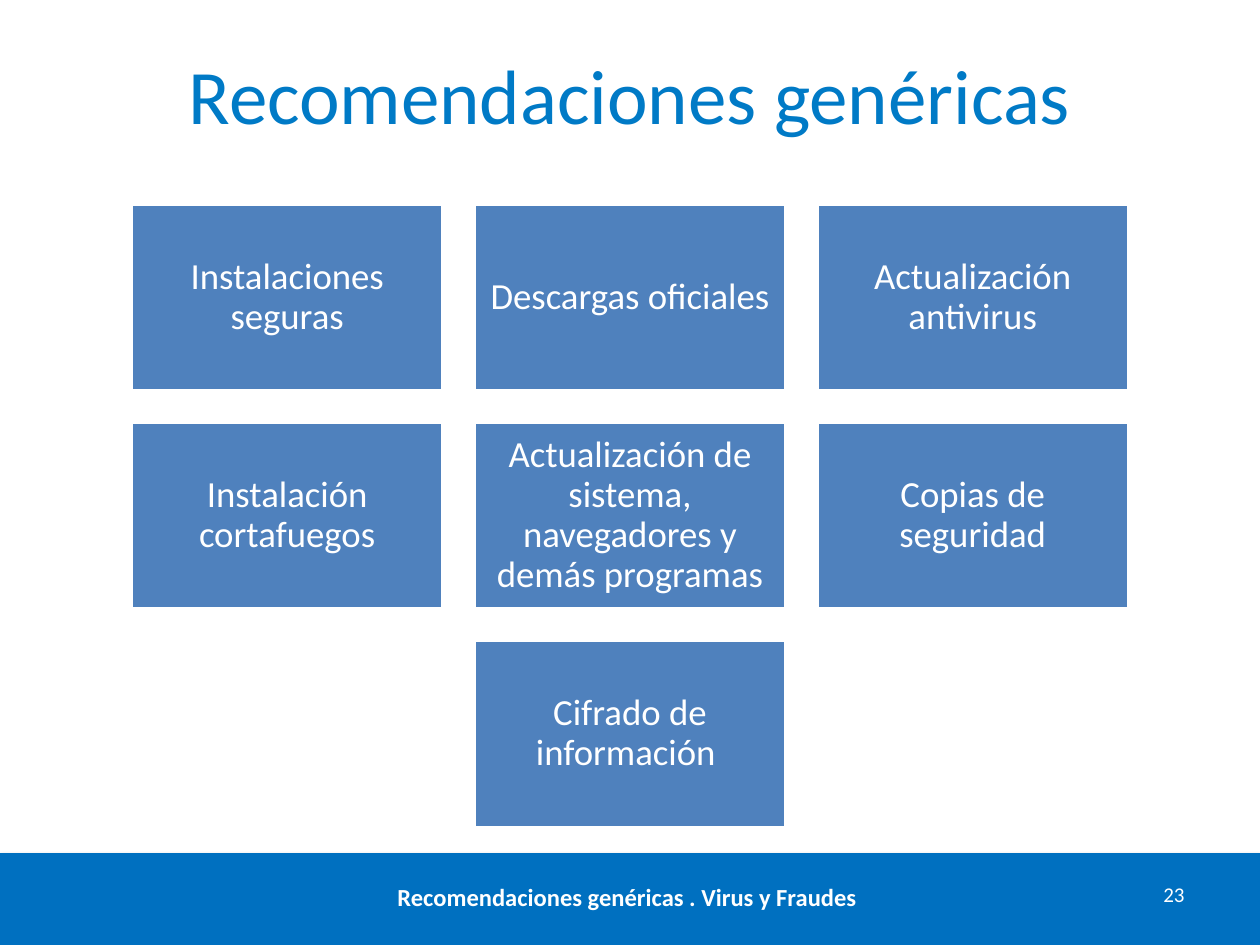
from dataclasses import dataclass

from pptx import Presentation
from pptx.dml.color import RGBColor
from pptx.enum.shapes import MSO_SHAPE
from pptx.enum.text import MSO_ANCHOR, PP_ALIGN
from pptx.oxml import parse_xml
from pptx.oxml.ns import nsdecls, qn
from pptx.util import Cm, Pt


@dataclass(frozen=True)
class Theme:
    font: str = "Calibri"
    title: RGBColor = RGBColor(0x00, 0x7A, 0xC6)
    band: RGBColor = RGBColor(0x00, 0x70, 0xC0)
    tile: RGBColor = RGBColor(0x4F, 0x81, 0xBD)
    white: RGBColor = RGBColor(0xFF, 0xFF, 0xFF)
    title_size: int = 44
    tile_size: int = 21
    footer_size: int = 14
    number_size: int = 12


class SlideBuilder:
    def __init__(self, page, theme):
        self.page = page
        self.theme = theme

    def set_text(self, box, text, size, color, align=PP_ALIGN.CENTER, bold=False):
        frame = box.text_frame
        frame.word_wrap = True
        frame.text = text
        para = frame.paragraphs[0]
        para.alignment = align
        for span in para.runs:
            span.font.name = self.theme.font
            span.font.size = Pt(size)
            span.font.bold = bold
            span.font.color.rgb = color
        return para

    def rectangle(self, left, top, width, height, fill):
        box = self.page.shapes.add_shape(
            MSO_SHAPE.RECTANGLE, Cm(left), Cm(top), Cm(width), Cm(height))
        box.shadow.inherit = False
        box.fill.solid()
        box.fill.fore_color.rgb = fill
        return box

    def band(self, left, top, width, height):
        box = self.rectangle(left, top, width, height, self.theme.band)
        box.line.fill.background()
        effects = box._element.spPr.find(qn("a:effectLst"))
        effects.append(parse_xml(
            f'<a:outerShdw {nsdecls("a")} blurRad="{Pt(3.1)}" dist="{Pt(1.8)}" '
            'dir="5400000" rotWithShape="0"><a:srgbClr val="000000">'
            '<a:alpha val="35000"/></a:srgbClr></a:outerShdw>'))

    def tile(self, left, top, width, height, text):
        box = self.rectangle(left, top, width, height, self.theme.tile)
        box.line.color.rgb = self.theme.white
        box.line.width = Pt(2)
        frame = box.text_frame
        frame.vertical_anchor = MSO_ANCHOR.MIDDLE
        frame.margin_left = frame.margin_right = Cm(0.23)
        frame.margin_top = frame.margin_bottom = Cm(0.23)
        para = self.set_text(box, text, self.theme.tile_size, self.theme.white)
        para.line_spacing = 0.9

    def label(self, left, top, width, height, text, size, color, **style):
        box = self.page.shapes.add_textbox(Cm(left), Cm(top), Cm(width), Cm(height))
        self.set_text(box, text, size, color, **style)
        return box


TILES = [
    "Instalaciones seguras",
    "Descargas oficiales",
    "Actualización antivirus",
    "Instalación cortafuegos",
    "Actualización de sistema, navegadores y demás programas",
    "Copias de seguridad",
    "Cifrado de información ",
]
COLUMNS = 3
TILE_WIDTH, TILE_HEIGHT, GAP = 6.28, 3.77, 0.63
GRID_TOP = 4.11
SLIDE_WIDTH, SLIDE_HEIGHT = 25.4, 19.05


def add_tiles(builder):
    for start in range(0, len(TILES), COLUMNS):
        row = TILES[start:start + COLUMNS]
        row_width = len(row) * (TILE_WIDTH + GAP) - GAP
        left = (SLIDE_WIDTH - row_width) / 2
        top = GRID_TOP + start // COLUMNS * (TILE_HEIGHT + GAP)
        for column, text in enumerate(row):
            builder.tile(left + column * (TILE_WIDTH + GAP), top,
                         TILE_WIDTH, TILE_HEIGHT, text)


def main():
    deck = Presentation()
    deck.slide_width, deck.slide_height = Cm(SLIDE_WIDTH), Cm(SLIDE_HEIGHT)
    theme = Theme()
    builder = SlideBuilder(deck.slides.add_slide(deck.slide_layouts[6]), theme)

    builder.band(0, 17.2, SLIDE_WIDTH, 1.93)
    title = builder.label(1.27, 0.76, 22.86, 3.18, "Recomendaciones genéricas",
                          theme.title_size, theme.title)
    title.text_frame.margin_top = Cm(0.2)
    add_tiles(builder)
    builder.label(21.16, 17.65, 2.97, 1.02, "23", theme.number_size, theme.white,
                  align=PP_ALIGN.RIGHT)
    builder.label(4.7, 17.65, 16, 1.02, "Recomendaciones genéricas . Virus y Fraudes ",
                  theme.footer_size, theme.white, bold=True)
    deck.save("out.pptx")


if __name__ == "__main__":
    main()
